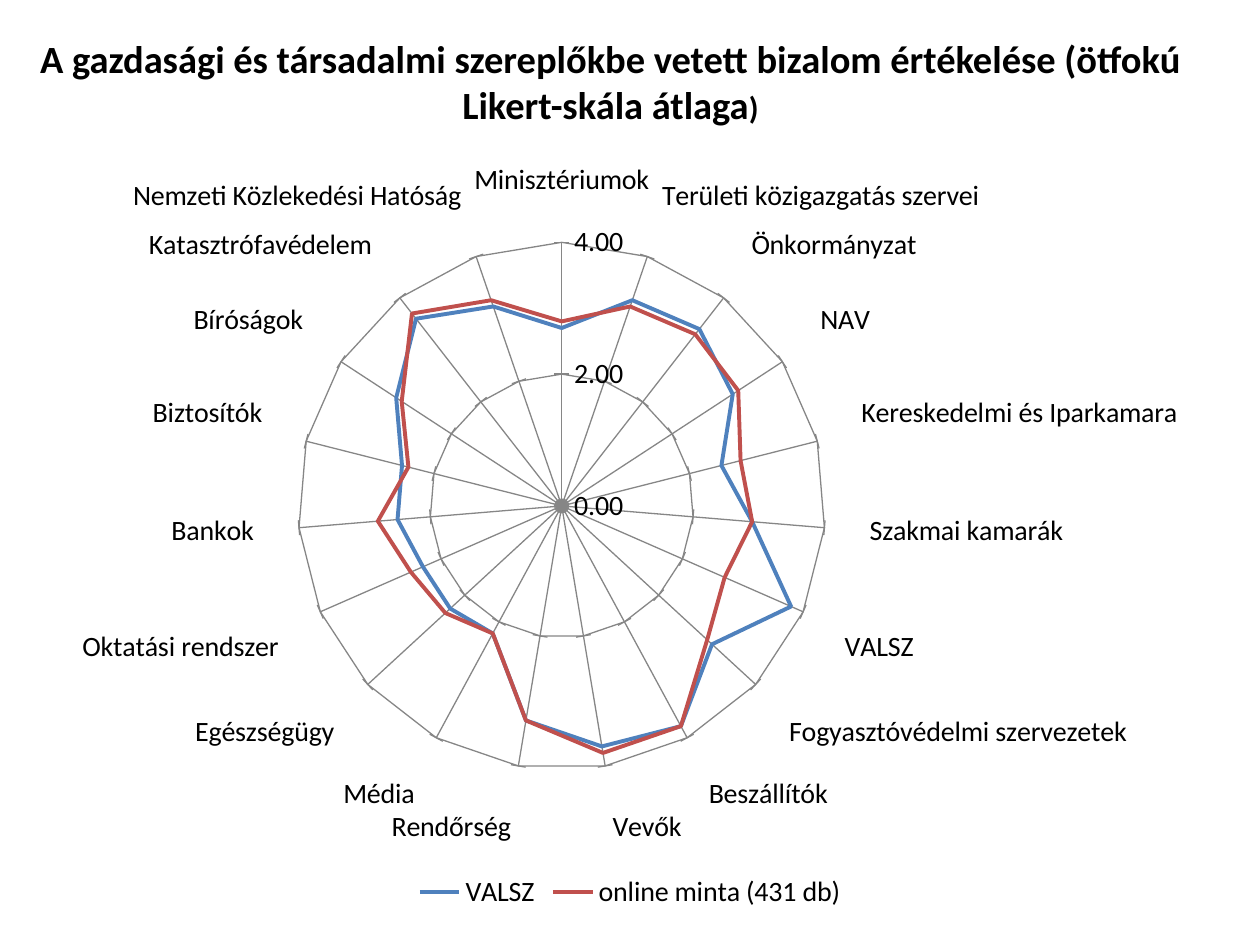
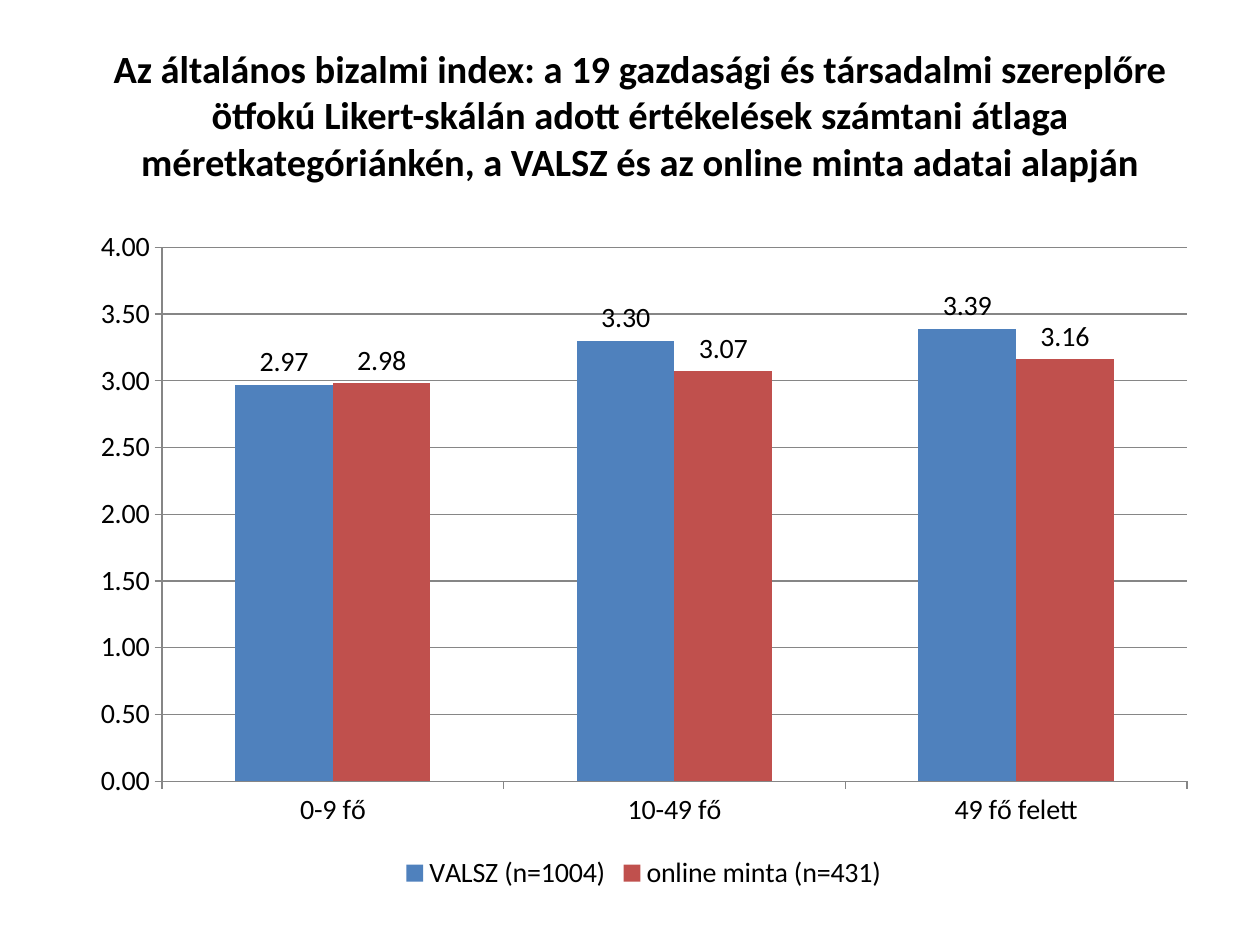
from pptx import Presentation
from pptx.chart.data import CategoryChartData
from pptx.dml.color import RGBColor
from pptx.enum.chart import XL_CHART_TYPE, XL_LABEL_POSITION, XL_LEGEND_POSITION, XL_TICK_MARK
from pptx.enum.text import MSO_AUTO_SIZE, PP_ALIGN
from pptx.util import Inches, Pt

# Shared look
FONT = "Calibri"
BLACK, GREY = "000000", "868686"
COLORS = ["4F81BD", "C0504D"]
FORMAT = "###0.00"

# Trust in each actor: name, VALSZ members, online sample
TRUST = [
    ("Minisztériumok", 2.7, 2.8),
    ("Területi közigazgatás szervei", 3.3, 3.2),
    ("Önkormányzat", 3.4, 3.3),
    ("NAV", 3.1, 3.2),
    ("Kereskedelmi és Iparkamara", 2.5, 2.8),
    ("Szakmai kamarák", 2.9, 2.9),
    ("VALSZ", 3.8, 2.7),
    ("Fogyasztóvédelmi szervezetek", 3.1, 3),
    ("Beszállítók", 3.8, 3.8),
    ("Vevők", 3.7, 3.8),
    ("Rendőrség", 3.3, 3.3),
    ("Média", 2.2, 2.2),
    ("Egészségügy", 2.3, 2.4),
    ("Oktatási rendszer", 2.3, 2.5),
    ("Bankok", 2.5, 2.8),
    ("Biztosítók", 2.5, 2.4),
    ("Bíróságok", 3, 2.9),
    ("Katasztrófavédelem", 3.6, 3.7),
    ("Nemzeti Közlekedési Hatóság", 3.2, 3.3),
]

# Trust index by company size
INDEX = [("0-9 fő", 2.97, 2.98), ("10-49 fő", 3.3, 3.07), ("49 fő felett", 3.39, 3.16)]

# Titles as (text, size) runs
TRUST_TITLE = [
    ("A gazdasági és társadalmi szereplőkbe vetett bizalom értékelése "
     "(ötfokú Likert-skála átlaga", 22),
    (")", 18),
]
INDEX_TITLE = [
    ("Az általános bizalmi index: a 19 gazdasági és társadalmi szereplőre "
     "ötfokú Likert-skálán adott értékelések számtani átlaga méretkategóriánkén, "
     "az VALSZ és az online minta adatai alapján".replace("az VALSZ", "a VALSZ"), 22),
]


def rgb(code):
    return RGBColor.from_string(code)


def style(font, size):
    font.name, font.size = FONT, Pt(size)
    font.color.rgb = rgb(BLACK)


def outline(line, color, width):
    line.color.rgb = rgb(color)
    line.width = Pt(width)


def add_title(slide, runs, box):
    frame = slide.shapes.add_textbox(*map(Inches, box)).text_frame
    frame.word_wrap = True
    frame.auto_size = MSO_AUTO_SIZE.SHAPE_TO_FIT_TEXT
    para = frame.paragraphs[0]
    para.alignment = PP_ALIGN.CENTER
    for text, size in runs:
        run = para.add_run()
        run.text = text
        style(run.font, size)
        run.font.bold = True


def add_chart(slide, kind, rows, names, box, step):
    cats, *series = zip(*rows)
    data = CategoryChartData(number_format=FORMAT)
    data.categories = cats
    for name, vals in zip(names, series):
        data.add_series(name, vals)
    chart = slide.shapes.add_chart(kind, *map(Inches, box), data).chart
    style(chart.font, 10)
    chart.has_title = False
    chart.plots[0].vary_by_categories = False

    # Legend
    chart.has_legend = True
    chart.legend.position = XL_LEGEND_POSITION.BOTTOM
    chart.legend.include_in_layout = False
    style(chart.legend.font, 16)

    # Axes
    for axis in (chart.category_axis, chart.value_axis):
        style(axis.tick_labels.font, 16)
        outline(axis.format.line, GREY, 0.75)
        axis.major_tick_mark = XL_TICK_MARK.OUTSIDE
        axis.minor_tick_mark = XL_TICK_MARK.NONE
    scale = chart.value_axis
    scale.minimum_scale, scale.maximum_scale, scale.major_unit = 0, 4, step
    scale.tick_labels.number_format = FORMAT
    scale.tick_labels.number_format_is_linked = False
    outline(scale.major_gridlines.format.line, GREY, 0.75)
    return chart


def add_radar(slide):
    chart = add_chart(slide, XL_CHART_TYPE.RADAR, TRUST,
                      ["VALSZ", "online minta (431 db)"], (0.47, 1.17, 9.06, 6.09), 2)
    chart.value_axis.major_tick_mark = XL_TICK_MARK.CROSS
    outline(chart.category_axis.major_gridlines.format.line, GREY, 0.75)
    for series, color in zip(chart.plots[0].series, COLORS):
        outline(series.format.line, color, 2.25)
        series.smooth = False


def add_columns(slide):
    chart = add_chart(slide, XL_CHART_TYPE.COLUMN_CLUSTERED, INDEX,
                      ["VALSZ (n=1004)", "online minta (n=431)"], (0.62, 1.72, 8.98, 5.39), 0.5)
    plot = chart.plots[0]
    plot.gap_width, plot.overlap = 150, 0
    for series, color in zip(plot.series, COLORS):
        series.format.fill.solid()
        series.format.fill.fore_color.rgb = rgb(color)
        labels = series.data_labels
        labels.show_value = True
        labels.position = XL_LABEL_POSITION.OUTSIDE_END
        labels.number_format, labels.number_format_is_linked = FORMAT, False
        style(labels.font, 16)


def main():
    deck = Presentation()
    deck.slide_width, deck.slide_height = Inches(10), Inches(7.5)
    pages = [
        (TRUST_TITLE, (0, 0.23, 9.69, 0.84), add_radar),
        (INDEX_TITLE, (0.55, 0.31, 9.06, 1.21), add_columns),
    ]
    for title, box, draw in pages:
        slide = deck.slides.add_slide(deck.slide_layouts[6])
        add_title(slide, title, box)
        draw(slide)
    deck.save("out.pptx")


if __name__ == "__main__":
    main()
